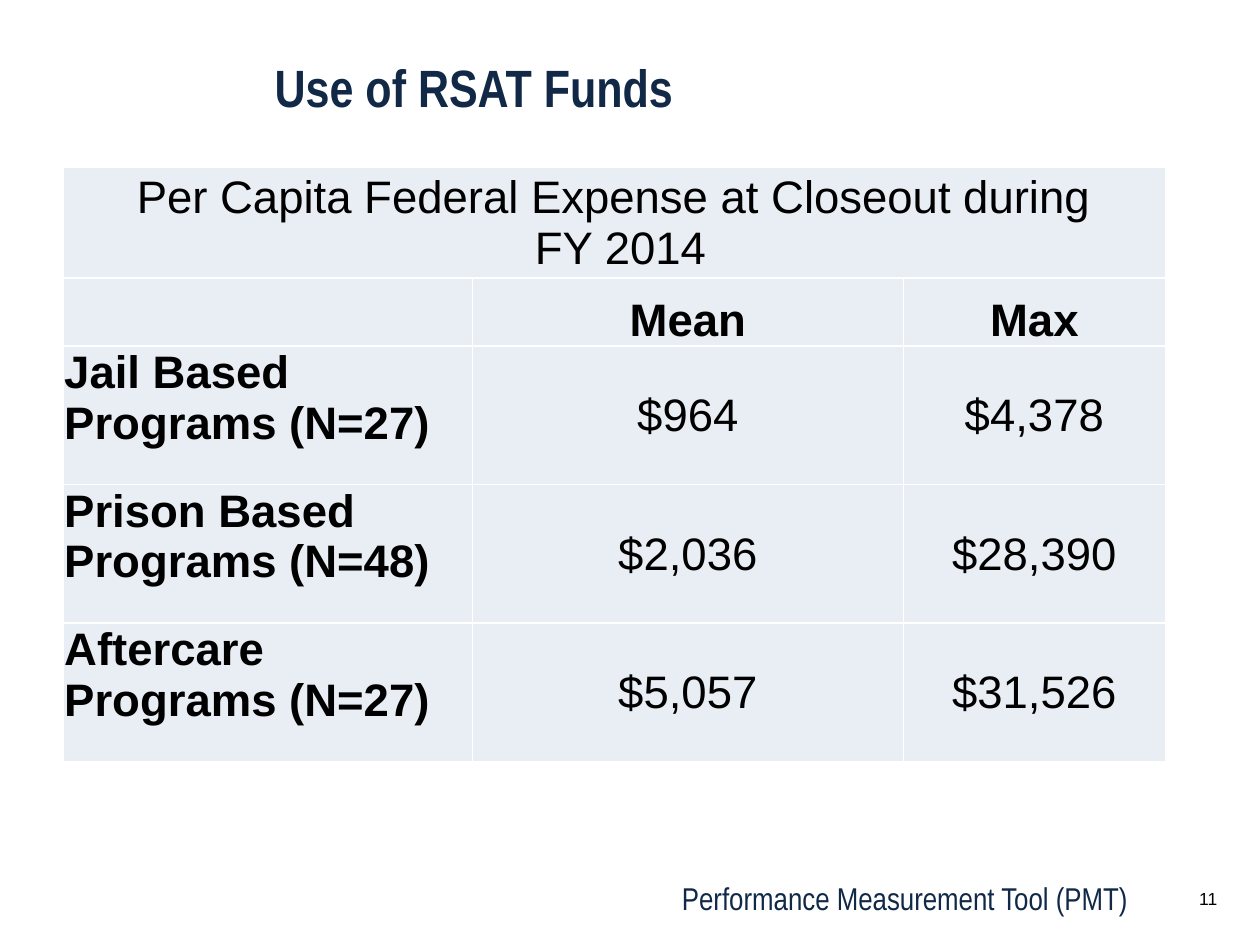
from dataclasses import dataclass

from lxml import etree
from pptx import Presentation
from pptx import util as u
from pptx.dml.color import RGBColor
from pptx.enum import text
from pptx.oxml.ns import qn


@dataclass(frozen=True)
class Theme:
    navy: str = "112947"
    black: str = "000000"
    cell: str = "E9EDF4"
    border: str = "FFFFFF"
    heading_font: str = "Arial Narrow"
    body_font: str = "Arial"
    title_size: int = 30
    table_size: int = 26
    footer_size: int = 18
    number_size: int = 10


@dataclass(frozen=True)
class Expense:
    program: str
    mean: str
    maximum: str


THEME = Theme()
LEFT, CENTER, RIGHT = text.PP_ALIGN.LEFT, text.PP_ALIGN.CENTER, text.PP_ALIGN.RIGHT
TOP, MIDDLE, BOTTOM = text.MSO_ANCHOR.TOP, text.MSO_ANCHOR.MIDDLE, text.MSO_ANCHOR.BOTTOM

COLUMN_WIDTHS = (3.25, 3.42, 2.08)
ROW_HEIGHTS = (0.84, 0.54, 1.1, 1.1, 1.1)
EXPENSES = (
    Expense("Jail Based Programs (N=27)", "$964", "$4,378"),
    Expense("Prison Based Programs (N=48)", "$2,036", "$28,390"),
    Expense("Aftercare Programs (N=27)", "$5,057", "$31,526"),
)


def write(frame, content: str, *, size: int, font: str = THEME.body_font,
          color: str = THEME.black, bold: bool = False, align=LEFT, spacing=None) -> None:
    """Fill a text frame with one formatted paragraph per line of content."""
    for index, line in enumerate(content.split("\n")):
        paragraph = frame.add_paragraph() if index else frame.paragraphs[0]
        paragraph.alignment = align
        if spacing is not None:
            paragraph.line_spacing = spacing
        run = paragraph.add_run()
        run.text = line
        run.font.size = u.Pt(size)
        run.font.name = font
        run.font.bold = bold
        run.font.color.rgb = RGBColor.from_string(color)


def add_label(slide, left: float, top: float, width: float, height: float,
              content: str, *, wrap: bool = True, **text_format) -> None:
    box = slide.shapes.add_textbox(*map(u.Inches, (left, top, width, height)))
    box.text_frame.word_wrap = wrap
    write(box.text_frame, content, align=RIGHT, **text_format)


def add_title(slide, content: str) -> None:
    title = slide.shapes.title
    title.left, title.top, title.width, title.height = map(u.Inches, (2.08, 0.49, 7.08, 0.5))
    title.text_frame.auto_size = text.MSO_AUTO_SIZE.NONE
    title.text_frame.vertical_anchor = BOTTOM
    write(title.text_frame, content, size=THEME.title_size, font=THEME.heading_font,
          color=THEME.navy, bold=True, spacing=u.Pt(31))


def style_cell(cell) -> None:
    cell.fill.solid()
    cell.fill.fore_color.rgb = RGBColor.from_string(THEME.cell)
    cell.margin_left = cell.margin_right = cell.margin_top = u.Inches(0.01)
    cell.margin_bottom = 0
    properties = cell._tc.get_or_add_tcPr()
    for position, side in enumerate(("lnL", "lnR", "lnT", "lnB")):
        line = etree.Element(qn(f"a:{side}"), w=str(u.Pt(1)))
        fill = etree.SubElement(line, qn("a:solidFill"))
        etree.SubElement(fill, qn("a:srgbClr"), val=THEME.border)
        properties.insert(position, line)


def fill_cell(cell, content: str, *, anchor=MIDDLE, align=CENTER, bold: bool = False) -> None:
    cell.vertical_anchor = anchor
    write(cell.text_frame, content, size=THEME.table_size, align=align, bold=bold)


def add_expense_table(slide) -> None:
    frame = slide.shapes.add_table(
        len(ROW_HEIGHTS), len(COLUMN_WIDTHS), u.Inches(0.5), u.Inches(1.33),
        u.Inches(sum(COLUMN_WIDTHS)), u.Inches(sum(ROW_HEIGHTS)))
    table = frame.table
    table.first_row = table.horz_banding = False
    for column, width in zip(table.columns, COLUMN_WIDTHS):
        column.width = u.Inches(width)
    for row, height in zip(table.rows, ROW_HEIGHTS):
        row.height = u.Inches(height)
    for cell in table.iter_cells():
        style_cell(cell)

    table.cell(0, 0).merge(table.cell(0, 2))
    fill_cell(table.cell(0, 0), "Per Capita Federal Expense at Closeout during\n FY 2014")
    for column, heading in enumerate(("Mean", "Max"), start=1):
        fill_cell(table.cell(1, column), heading, anchor=BOTTOM, bold=True)
    for row, expense in enumerate(EXPENSES, start=2):
        fill_cell(table.cell(row, 0), expense.program, anchor=TOP, align=LEFT, bold=True)
        fill_cell(table.cell(row, 1), expense.mean)
        fill_cell(table.cell(row, 2), expense.maximum)


def main() -> None:
    presentation = Presentation()
    presentation.slide_width, presentation.slide_height = u.Inches(10), u.Inches(7.5)
    slide = presentation.slides.add_slide(presentation.slide_layouts[5])
    add_label(slide, 4.17, 6.93, 4.88, 0.4, "Performance Measurement Tool (PMT)",
              size=THEME.footer_size, font=THEME.heading_font, color=THEME.navy)
    add_title(slide, "Use of RSAT Funds")
    add_label(slide, 9.39, 7, 0.37, 0.27, "11", wrap=False, size=THEME.number_size)
    add_expense_table(slide)
    presentation.save("out.pptx")


if __name__ == "__main__":
    main()
